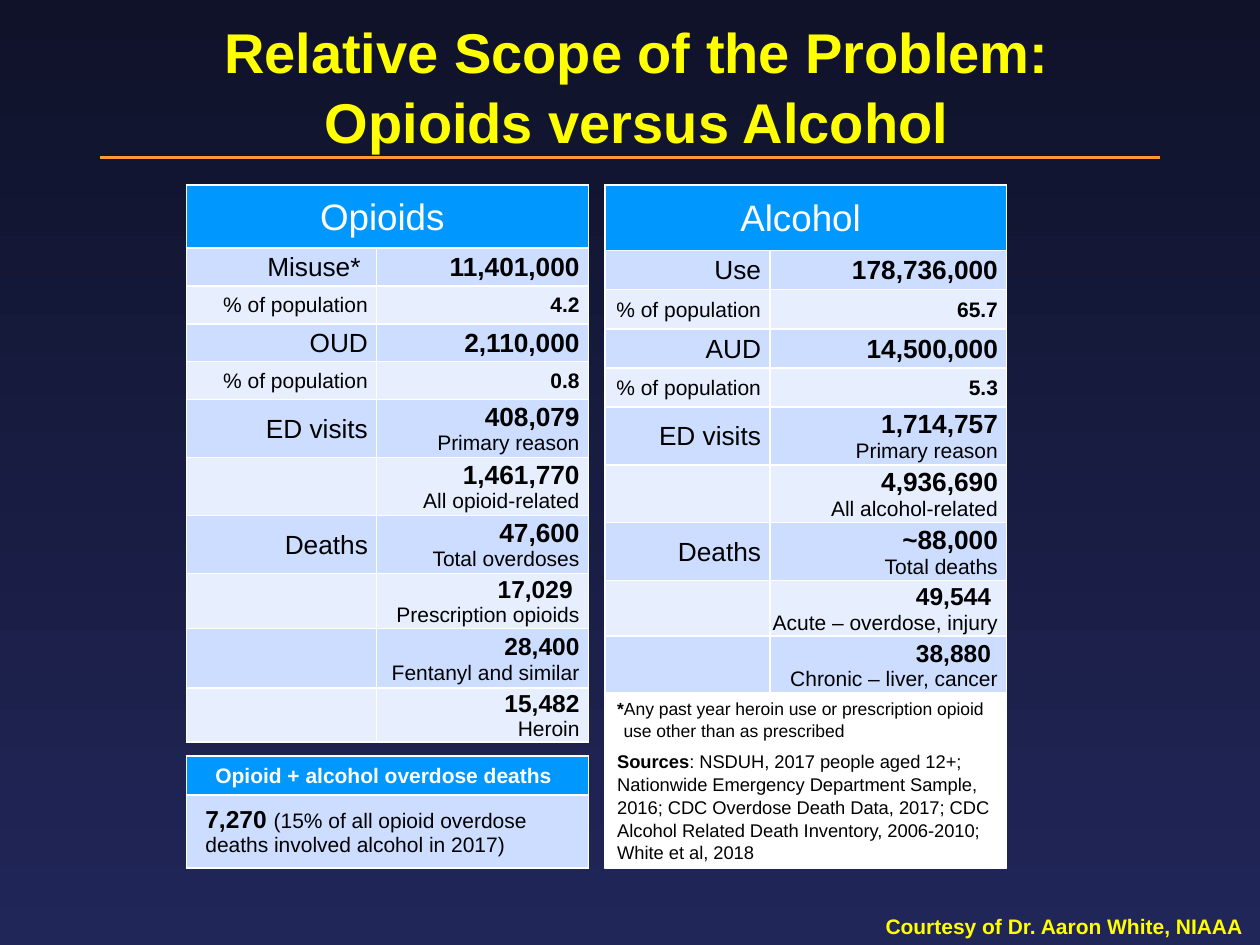
from lxml import etree
from pptx import Presentation
from pptx.dml.color import RGBColor
from pptx.enum.shapes import MSO_CONNECTOR, MSO_SHAPE
from pptx.enum.text import MSO_ANCHOR, PP_ALIGN
from pptx.oxml.ns import qn
from pptx.util import Inches, Pt

LEFT, CENTER, RIGHT = PP_ALIGN.LEFT, PP_ALIGN.CENTER, PP_ALIGN.RIGHT
TOP, MIDDLE = MSO_ANCHOR.TOP, MSO_ANCHOR.MIDDLE
RECTANGLE, STRAIGHT = MSO_SHAPE.RECTANGLE, MSO_CONNECTOR.STRAIGHT

color = RGBColor.from_string
WHITE, BLACK, YELLOW, ORANGE = "FFFFFF", "000000", "FFFF00", "FF9933"
HEADER, BANDS = "0098FF", ("CCDDFF", "E7EFFF")

# Grid in inches: two columns of equal width
WIDTH, HEIGHT = 10, 7.5
COLUMN_WIDTH, GAP = 3.19, 0.13
COLUMNS = [1.48 + index * (COLUMN_WIDTH + GAP) for index in range(2)]
TABLE_TOP, NOTES_TOP, OVERDOSE_TOP, BOTTOM = 1.47, 5.5, 6.0, 6.89


def write(paragraph, text, size=12, bold=False, fill=BLACK, align=LEFT):
    paragraph.alignment = align
    run = paragraph.add_run()
    run.text = text
    run.font.name, run.font.size, run.font.bold = "Arial", Pt(size), bold
    run.font.color.rgb = color(fill)


def format_cell(cell, fill, margins=(0.01, 0.01, 0.07, 0)):
    properties = cell._tc.get_or_add_tcPr()
    for side in ("lnL", "lnR", "lnT", "lnB"):
        border = etree.SubElement(properties, qn(f"a:{side}"), w=str(Pt(1)))
        solid = etree.SubElement(border, qn("a:solidFill"))
        etree.SubElement(solid, qn("a:srgbClr"), val=WHITE)
    cell.fill.solid()
    cell.fill.fore_color.rgb = color(fill)
    cell.vertical_anchor = MIDDLE
    (cell.margin_left, cell.margin_top,
     cell.margin_right, cell.margin_bottom) = map(Inches, margins)


presentation = Presentation()
presentation.slide_width, presentation.slide_height = Inches(WIDTH), Inches(HEIGHT)
slide = presentation.slides.add_slide(presentation.slide_layouts[5])

# Background
background = slide.background.fill
background.gradient()
background.gradient_angle = 270
for stop, shade in zip(background.gradient_stops, ("0F1229", "212659")):
    stop.color.rgb = color(shade)

# Title and rule
title = slide.shapes.title
title.left, title.top = Inches(0.61), Inches(0.07)
title.width, title.height = Inches(8.89), Inches(1.15)
frame = title.text_frame
frame.vertical_anchor = TOP
frame.add_paragraph()
for paragraph, line in zip(frame.paragraphs, ("Relative Scope of the Problem:",
                                              "Opioids versus Alcohol")):
    write(paragraph, line, size=32, bold=True, fill=YELLOW, align=CENTER)
    paragraph.line_spacing = 1.04

rule = slide.shapes.add_connector(STRAIGHT, Inches(0.79), Inches(1.25),
                                  Inches(WIDTH - 0.79), Inches(1.25))
rule.line.color.rgb = color(ORANGE)
rule.line.width = Pt(2.25)
etree.SubElement(rule._element.spPr, qn("a:effectLst"))

# Comparison tables: label, value, detail, value size
PERCENT = "% of population"
tables = [
    ("Opioids ", 1.51, [0.5] + [0.3] * 4 + [0.46] * 3 + [0.44, 0.47, 0.43], [
        ("Misuse* ", "11,401,000", "", 15),
        (PERCENT, "4.2", "", 12),
        ("OUD", "2,110,000", "", 15),
        (PERCENT, "0.8", "", 12),
        ("ED visits", "408,079", "Primary reason", 15),
        ("", "1,461,770", "All opioid-related", 15),
        ("Deaths", "47,600", "Total overdoses", 15),
        ("", "17,029 ", "Prescription opioids", 14),
        ("", "28,400", "Fentanyl and similar", 14),
        ("", "15,482", "Heroin", 14),
    ]),
    ("Alcohol ", 1.31, [0.52] + [0.31] * 4 + [0.46] * 3 + [0.44, 0.46], [
        ("Use", "178,736,000", "", 15),
        (PERCENT, "65.7", "", 12),
        ("AUD", "14,500,000", "", 15),
        (PERCENT, "5.3", "", 12),
        ("ED visits", "1,714,757", "Primary reason", 15),
        ("", "4,936,690", "All alcohol-related", 15),
        ("Deaths", "~88,000", "Total deaths", 15),
        ("", "49,544 ", "Acute – overdose, injury", 14),
        ("", "38,880 ", "Chronic – liver, cancer", 14),
    ]),
]
for left, (heading, label_width, heights, rows) in zip(COLUMNS, tables):
    table = slide.shapes.add_table(
        len(heights), 2, Inches(left), Inches(TABLE_TOP),
        Inches(COLUMN_WIDTH), Inches(sum(heights))).table
    table.columns[0].width = Inches(label_width)
    table.columns[1].width = Inches(COLUMN_WIDTH - label_width)
    for row, height in zip(table.rows, heights):
        row.height = Inches(height)
    header = table.cell(0, 0)
    header.merge(table.cell(0, 1))
    for cell in table.rows[0].cells:
        format_cell(cell, HEADER, margins=(0.01, 0.01, 0.01, 0))
    write(header.text_frame.paragraphs[0], heading, size=21, fill=WHITE, align=CENTER)
    for index, (label, value, detail, size) in enumerate(rows):
        label_cell, value_cell = table.rows[index + 1].cells
        for cell in (label_cell, value_cell):
            format_cell(cell, BANDS[index % 2])
        if label:
            write(label_cell.text_frame.paragraphs[0], label, size=size, align=RIGHT)
        frame = value_cell.text_frame
        write(frame.paragraphs[0], value, size=size, bold=True, align=RIGHT)
        if detail:
            write(frame.add_paragraph(), detail, align=RIGHT)

# Combined overdose table
table = slide.shapes.add_table(
    2, 1, Inches(COLUMNS[0]), Inches(OVERDOSE_TOP),
    Inches(COLUMN_WIDTH), Inches(BOTTOM - OVERDOSE_TOP)).table
table.rows[0].height, table.rows[1].height = Inches(0.31), Inches(0.58)
header, body = table.cell(0, 0), table.cell(1, 0)
format_cell(header, HEADER)
write(header.text_frame.paragraphs[0], "Opioid + alcohol overdose deaths",
      bold=True, fill=WHITE, align=CENTER)
format_cell(body, BANDS[0], margins=(0.15, 0.07, 0.15, 0.07))
paragraph = body.text_frame.paragraphs[0]
write(paragraph, "7,270 ", size=14, bold=True)
write(paragraph, "(15% of all opioid overdose deaths involved alcohol in 2017)")

# Notes and sources
notes = slide.shapes.add_shape(
    RECTANGLE, Inches(COLUMNS[1]), Inches(NOTES_TOP),
    Inches(COLUMN_WIDTH), Inches(BOTTOM - NOTES_TOP))
notes.shadow.inherit = False
notes.fill.solid()
notes.fill.fore_color.rgb = color(WHITE)
notes.line.color.rgb = color(WHITE)
notes.line.width = Pt(0.75)
frame = notes.text_frame
frame.word_wrap = True
frame.vertical_anchor = MIDDLE
footnote, sources = frame.paragraphs[0], frame.add_paragraph()
footnote.space_after = Pt(4.5)
properties = footnote._p.get_or_add_pPr()
properties.set("marL", str(Inches(0.05)))
properties.set("indent", str(-Inches(0.05)))
write(footnote, "*", size=10, bold=True)
write(footnote, "Any past year heroin use or prescription opioid use other than "
      "as prescribed", size=10)
write(sources, "Sources", size=10.5, bold=True)
write(sources, ": NSDUH, 2017 people aged 12+; Nationwide Emergency Department "
      "Sample, 2016; CDC Overdose Death Data, 2017; CDC Alcohol Related Death "
      "Inventory, 2006-2010; White et al, 2018", size=10.5)
for paragraph in (footnote, sources):
    paragraph.line_spacing = 1.04

# Credit in the bottom right corner
credit = slide.shapes.add_textbox(Inches(WIDTH - 3.07), Inches(HEIGHT - 0.3),
                                  Inches(3.07), Inches(0.3))
credit.text_frame.word_wrap = False
write(credit.text_frame.paragraphs[0], "Courtesy of Dr. Aaron White, NIAAA",
      bold=True, fill=YELLOW)

presentation.save("out.pptx")
